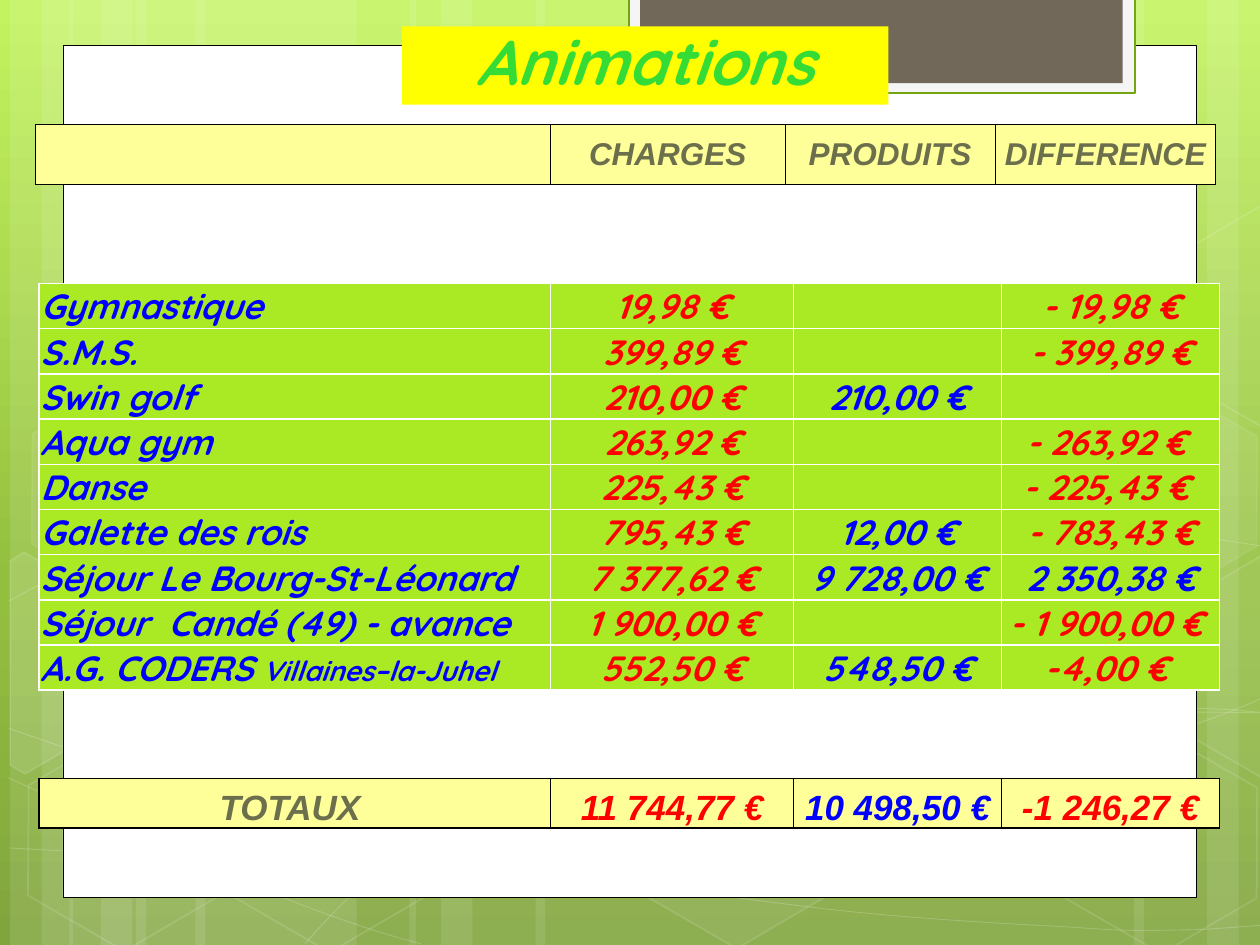
import math
from copy import deepcopy

from lxml import etree
from pptx import Presentation
from pptx import util as u
from pptx.dml.color import RGBColor
from pptx.enum import shapes, text
from pptx.oxml.ns import qn

W, H = 10, 7.5
WHITE, BLACK, RED, BLUE, GREY = "FFFFFF", "000000", "FF0000", "0000FF", "6C6F4C"
YELLOW, GREEN = "FFFF99", "AAEA25"

HEADER = [("", "CHARGES", "PRODUITS", "DIFFERENCE")]
ACTIVITIES = [
    ("Gymnastique", "19,98 €", "", "- 19,98 €"),
    ("S.M.S.", "399,89 €", "", "- 399,89 €"),
    ("Swin golf", "210,00 €", "210,00 €", ""),
    ("Aqua gym", "263,92 €", "", "- 263,92 € "),
    ("Danse", "225,43 €", "", "- 225,43 € "),
    ("Galette des rois", "795,43 €", "12,00 €", "- 783,43 €"),
    ("Séjour Le Bourg-St-Léonard", "7 377,62 €", "9 728,00 €", "2 350,38 €"),
    ("Séjour  Candé (49) - avance", "1 900,00 €", "", "- 1 900,00 € "),
    ("A.G. CODERS ", "552,50 €", "548,50 €", "-4,00 € "),
]
PLACE = "Villaines–la-Juhel"
TOTALS = [("TOTAUX ", "11 744,77 €", "10 498,50 €", "-1 246,27 €")]
COLS = [4.06, 1.93, 1.65, 1.73]

BACKGROUND = [(0, "C3F35F"), (0.62, "93BF3F"), (1, "81A53E")]
STRIPES = [  # left, width, rotation
    (1.08, 1.75, 0), (0.08, 0.5, 0), (0.33, 0.83, 0), (1.55, 1.75, 0), (0.55, 0.5, 0),
    (0.8, 0.83, 0), (7.33, 1.75, 180), (9.58, 0.5, 180), (9, 0.83, 180),
    (4.25, 3.08, 0), (3.25, 0.5, 0), (3.5, 0.83, 0)]
CURVES = [  # start point, then three points for each Bézier segment
    [(0.07, 6.73), (0.61, 6.76), (1.15, 6.79), (1.9, 6.78), (2.65, 6.77), (3.58, 6.75),
     (4.58, 6.65), (5.58, 6.55), (7, 6.36), (7.92, 6.17), (8.83, 5.98), (9.77, 5.68),
     (10.07, 5.51)],
    [(0.07, 4.77), (0.36, 4.61), (0.65, 4.46), (1.21, 4.31), (1.78, 4.16), (2.59, 3.94),
     (3.47, 3.87), (4.36, 3.8), (5.44, 3.79), (6.54, 3.87), (7.64, 3.95), (9.47, 4.26),
     (10.07, 4.34)],
    [(0.06, 6.17), (1.27, 6.72), (2.47, 7.27), (3.34, 7.49)],
    [(0.07, 5.78), (0.38, 5.89), (0.7, 6), (1.28, 6.16), (1.86, 6.31), (2.73, 6.56),
     (3.57, 6.73), (4.4, 6.9), (5.45, 7.08), (6.28, 7.18), (7.11, 7.29), (8, 7.33),
     (8.53, 7.36), (9.05, 7.4), (9.19, 7.38), (9.45, 7.38), (9.71, 7.37), (9.89, 7.35),
     (10.07, 7.34)],
    [(2.42, 7.49), (2.6, 7.29), (2.78, 7.09), (3.02, 6.91), (3.26, 6.73), (3.6, 6.53),
     (3.88, 6.39), (4.16, 6.25), (4.33, 6.19), (4.7, 6.09), (5.06, 5.99), (5.73, 5.85),
     (6.08, 5.78), (6.44, 5.71), (6.49, 5.71), (6.8, 5.69), (7.11, 5.66), (7.6, 5.63),
     (7.94, 5.62), (8.29, 5.61), (8.86, 5.62), (8.86, 5.62), (9.08, 5.62), (9.31, 5.62),
     (9.53, 5.62), (9.71, 5.63), (9.88, 5.64), (9.97, 5.65), (10.06, 5.66), (10.03, 5.65),
     (10.06, 5.66)],
]
CURVES[-1].pop(21)  # the straight stretch starts where the curve before it ends
TILT = 30
HEXAGONS = [  # left, top, fill %, line %
    (3.34, 0.36, 4, 8), (4.97, 5.89, 6, 12), (0.11, 5.91, 0, 12),
    (0.14, 3.12, 7, 8), (1.74, 5.92, 0, 12), (7.53, 4.53, 10, 12),
    (8.34, 5.93, 0, 12), (8.34, 3.14, 7, 8)]
CUT_HEXAGONS = [  # centre of rotation, points as they appear, fill %
    ((0.36, 5.35), [(0.08, 4.45), (0.19, 4.38), (0.96, 4.82), (0.95, 5.7), (0.2, 6.14),
                    (0.08, 6.07)], 10),
    ((9.85, 5.2), [(9.26, 4.85), (10.01, 4.41), (10.09, 4.46), (10.09, 6.13),
                   (10.02, 6.17), (9.26, 5.73)], 4),
    ((9.85, 2.41), [(9.26, 2.07), (10.01, 1.63), (10.1, 1.68), (10.09, 3.35),
                    (10.02, 3.39), (9.26, 2.95)], 0),
]
PANELS = [  # left, top, width, height, fill, line, line width
    (0.5, 0.36, 9, 6.76, WHITE, BLACK, 0.5),
    (4.99, -0.02, 4.02, 0.76, "F5F5F5", "74A510", 1.25),
    (5.08, -0.02, 3.83, 0.68, "71685A", None, 0)]


def rgb(value):
    return RGBColor.from_string(value)


def paint(fill, color, opacity=100):
    """Fill with a colour at an opacity in percent; none at 0."""
    if not color or not opacity:
        fill.background()
        return
    fill.solid()
    fill.fore_color.rgb = rgb(color)
    if opacity < 100:
        clr = fill._xPr.find(qn("a:solidFill"))[0]
        etree.SubElement(clr, qn("a:alpha"), val=str(opacity * 1000))


def style(sp, fill, opacity=100, line=None, width=1, line_opacity=100):
    sp.shadow.inherit = False
    paint(sp.fill, fill, opacity)
    paint(sp.line.fill, line, line_opacity)
    if line:
        sp.line.width = u.Pt(width)


def add_preset(s, kind, *box):
    return s.shapes.add_shape(kind, *map(u.Inches, box))


def add_outline(s, points, close):
    emu = [(u.Inches(x), u.Inches(y)) for x, y in points]
    builder = s.shapes.build_freeform(*emu[0])
    builder.add_line_segments(emu[1:], close=close)
    return builder.convert_to_shape()


def add_curve(s, points):
    """Outline whose points after the first form cubic Bézier segments."""
    sp = add_outline(s, points, False)
    outline = sp.element.xpath(".//a:path")[0]
    lines = outline.findall(qn("a:lnTo"))
    for i in range(0, len(lines), 3):
        segment = etree.SubElement(outline, qn("a:cubicBezTo"))
        for line in lines[i:i + 3]:
            segment.append(line[0])
            outline.remove(line)
    return sp


def turn_back(points, centre):
    """Undo the tilt, so that the shape's own rotation restores it."""
    cos, sin = math.cos(math.radians(TILT)), math.sin(math.radians(TILT))
    cx, cy = centre
    return [(cx + (x - cx) * cos + (y - cy) * sin, cy - (x - cx) * sin + (y - cy) * cos)
            for x, y in points]


def set_font(r, name, size, color):
    f = r.font
    f.name, f.size, f.bold, f.italic = name, u.Pt(size), True, True
    f.color.rgb = rgb(color)


def add_borders(cell, color, width):
    tcPr = cell._tc.get_or_add_tcPr()
    for side in ("lnL", "lnR", "lnT", "lnB"):
        ln = etree.SubElement(tcPr, qn("a:" + side), w=str(u.Pt(width)))
        etree.SubElement(etree.SubElement(ln, qn("a:solidFill")), qn("a:srgbClr"), val=color)


def amount_color(col, value):
    return RED if col == 1 or value.startswith("-") else BLUE


def add_grid(s, rows, left, top, row_height, cols, fill, border, font, size, label_color,
             anchor, label_align=text.PP_ALIGN.CENTER, color_of=amount_color):
    box = map(u.Inches, (left, top, sum(cols), row_height * len(rows)))
    table = s.shapes.add_table(len(rows), len(cols), *box).table
    table.first_row = table.horz_banding = False
    for column, width in zip(table.columns, cols):
        column.width = u.Inches(width)
    for i, row in enumerate(rows):
        for j, value in enumerate(row):
            cell = table.cell(i, j)
            add_borders(cell, *border)
            paint(cell.fill, fill)
            cell.margin_left = cell.margin_right = cell.margin_top = u.Inches(0.01)
            cell.margin_bottom = 0
            cell.vertical_anchor = anchor
            p = cell.text_frame.paragraphs[0]
            p.text = value
            p.alignment = label_align if j == 0 else text.PP_ALIGN.CENTER
            for r in p.runs:
                set_font(r, font, size, color_of(j, value) if j else label_color)
    return table


def main():
    prs = Presentation()
    prs.slide_width, prs.slide_height = u.Inches(W), u.Inches(H)
    s = prs.slides.add_slide(prs.slide_layouts[5])

    bg = s.background.fill
    bg.gradient()
    bg.gradient_angle = 270
    stops = s.element.xpath(".//a:gsLst")[0]
    stops.append(deepcopy(stops[-1]))
    for stop, (position, color) in zip(bg.gradient_stops, BACKGROUND):
        stop.position, stop.color.rgb = position, rgb(color)

    rect = shapes.MSO_SHAPE.RECTANGLE
    for left, width, rotation in STRIPES:
        sp = add_preset(s, rect, left, 0, width, H)
        sp.rotation = rotation
        style(sp, WHITE, 10)
    for curve in CURVES:
        style(add_curve(s, curve), None, 0, WHITE, 0.5, 20)
    for left, top, opacity, line_opacity in HEXAGONS:
        sp = add_preset(s, shapes.MSO_SHAPE.HEXAGON, left, top, 1.75, 1.52)
        sp.adjustments[0], sp.adjustments[1] = 0.285, 1.155
        sp.rotation = TILT
        style(sp, WHITE, opacity, WHITE, 1, line_opacity)
    for centre, points, opacity in CUT_HEXAGONS:
        sp = add_outline(s, turn_back(points, centre), True)
        sp.rotation = TILT
        style(sp, WHITE, opacity, WHITE, 1, 12)
    for *box, fill, line, width in PANELS:
        style(add_preset(s, rect, *box), fill, 100, line, width)

    title = s.shapes.title
    title.element.getparent().append(title.element)  # in front of the panels
    title.left, title.top, title.width, title.height = map(u.Inches, (3.19, 0.21, 3.86, 0.62))
    paint(title.fill, "FFFF00")
    tf = title.text_frame
    tf.text = "Animations"
    tf.vertical_anchor = text.MSO_ANCHOR.BOTTOM
    tf.paragraphs[0].alignment = text.PP_ALIGN.CENTER
    set_font(tf.paragraphs[0].runs[0], "Quicksand", 36, "36DC36")

    bottom = text.MSO_ANCHOR.BOTTOM
    add_grid(s, HEADER, 0.28, 0.99, 0.47, [4.09, 1.86, 1.67, 1.75], YELLOW, (BLACK, 0.5),
             "Arial", 18, GREY, text.MSO_ANCHOR.MIDDLE, color_of=lambda col, value: GREY)
    add_grid(s, TOTALS, 0.31, 6.18, 0.39, COLS, YELLOW, (BLACK, 1), "Arial", 20, GREY, bottom)
    table = add_grid(s, ACTIVITIES, 0.31, 2.25, 0.34, COLS, GREEN, (WHITE, 1),
                     "Quicksand", 20, BLUE, bottom, text.PP_ALIGN.LEFT)
    r = table.cell(len(ACTIVITIES) - 1, 0).text_frame.paragraphs[0].add_run()
    r.text = PLACE
    set_font(r, "Quicksand", 16, BLUE)

    prs.save("out.pptx")


if __name__ == "__main__":
    main()
